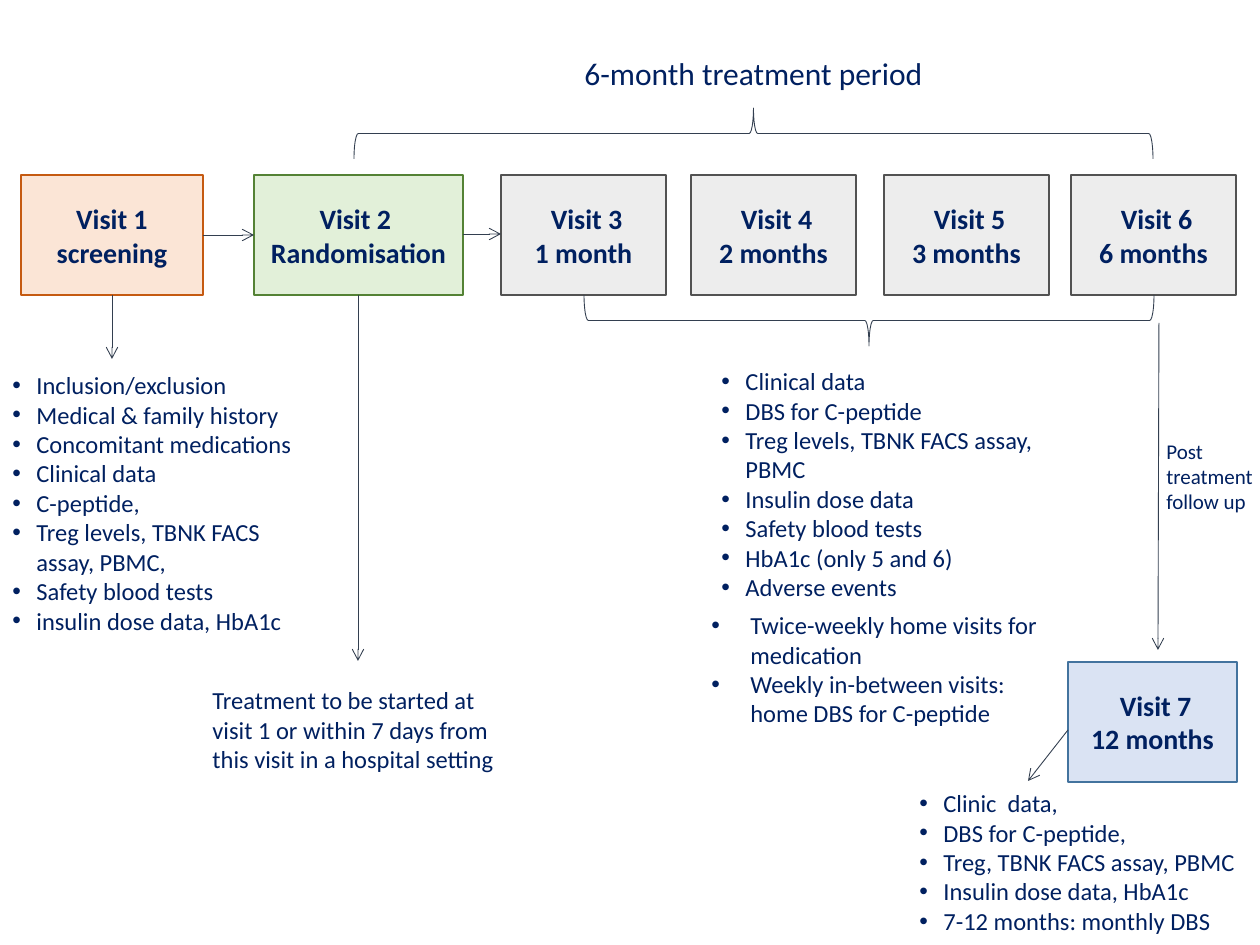
from lxml.etree import SubElement
from pptx import Presentation
from pptx.dml.color import RGBColor
from pptx.enum.shapes import MSO_CONNECTOR, MSO_SHAPE
from pptx.enum.text import MSO_ANCHOR, MSO_AUTO_SIZE, PP_ALIGN
from pptx.oxml.ns import qn
from pptx.util import Emu, Pt

PX_PER_INCH = 126
FONT = "Calibri"
NAVY = "002060"
LINE_COLOUR = "333F50"
VISIT_TOP, VISIT_HEIGHT = 175, 120
MONTH_WIDTH = 165
GREY_FILL, GREY_LINE = "EDEDED", "525252"

VISITS = [  # left, top, width, fill, line, text
    (21, VISIT_TOP, 182, "FBE5D6", "C55A11", "Visit 1 screening"),
    (254, VISIT_TOP, 209, "E2F0D9", "548235", "Visit 2 \nRandomisation"),
    (501, VISIT_TOP, MONTH_WIDTH, GREY_FILL, GREY_LINE, " Visit 3\n1 month"),
    (691, VISIT_TOP, MONTH_WIDTH, GREY_FILL, GREY_LINE, " Visit 4\n2 months"),
    (884, VISIT_TOP, MONTH_WIDTH, GREY_FILL, GREY_LINE, " Visit 5\n3 months"),
    (1071, VISIT_TOP, MONTH_WIDTH, GREY_FILL, GREY_LINE, " Visit 6\n6 months"),
    (1068, 662, 169, "DAE3F3", "43739E", " Visit 7\n12 months"),
]

ARROWS = [  # start x, start y, end x, end y
    (203, 235, 254, 235),
    (463, 234, 501, 234),
    (112, 295, 112, 359),
    (358, 295, 358, 661),
    (1159, 323, 1158, 650),
    (1068, 730, 1028, 781),
]

BULLET_LISTS = [  # left, top, width, height, indent, items
    (0, 364, 311, 369, 24, [
        "Inclusion/exclusion",
        "Medical & family history",
        "Concomitant medications",
        "Clinical data",
        "C-peptide,",
        "Treg levels, TBNK FACS assay, PBMC,",
        "Safety blood tests",
        "insulin dose data, HbA1c",
    ]),
    (709, 360, 359, 280, 24, [
        "Clinical data",
        "DBS for C-peptide",
        "Treg levels, TBNK FACS assay, PBMC",
        "Insulin dose data",
        "Safety blood tests",
        "HbA1c (only 5 and 6)",
        "Adverse events",
    ]),
    (699, 604, 368, 161, 39, [
        "Twice-weekly home visits for medication",
        "Weekly in-between visits: home DBS for C-peptide",
    ]),
    (907, 782, 353, 161, 24, [
        "Clinic  data,",
        "DBS for C-peptide,",
        "Treg, TBNK FACS assay, PBMC",
        "Insulin dose data, HbA1c",
        "7-12 months: monthly DBS",
    ]),
]


def px(length):
    return Emu(round(length * 914400 / PX_PER_INCH))


def colour(value):
    return RGBColor.from_string(value)


def set_line(line, value, width):
    line.color.rgb = colour(value)
    line.width = Pt(width)


def write(text_frame, text, size, bold=False, align=PP_ALIGN.LEFT):
    text_frame.word_wrap = True
    text_frame.text = text
    for paragraph in text_frame.paragraphs:
        paragraph.alignment = align
        for run in paragraph.runs:
            run.font.name = FONT
            run.font.size = Pt(size)
            run.font.bold = bold
            run.font.color.rgb = colour(NAVY)


def add_visit(slide, left, top, width, fill, line, text):
    shape = slide.shapes.add_shape(
        MSO_SHAPE.RECTANGLE, px(left), px(top), px(width), px(VISIT_HEIGHT))
    shape.shadow.inherit = False
    shape.fill.solid()
    shape.fill.fore_color.rgb = colour(fill)
    set_line(shape.line, line, 1)
    shape.text_frame.vertical_anchor = MSO_ANCHOR.MIDDLE
    write(shape.text_frame, text, 16, bold=True, align=PP_ALIGN.CENTER)


def add_text(slide, left, top, width, height, text, size=14, align=PP_ALIGN.LEFT):
    box = slide.shapes.add_textbox(px(left), px(top), px(width), px(height))
    write(box.text_frame, text, size, align=align)
    box.text_frame.auto_size = MSO_AUTO_SIZE.SHAPE_TO_FIT_TEXT
    return box


def add_bullets(slide, left, top, width, height, indent, items):
    box = add_text(slide, left, top, width, height, "\n".join(items))
    for paragraph in box.text_frame.paragraphs:
        properties = paragraph._p.get_or_add_pPr()
        properties.set("marL", str(px(indent)))
        properties.set("indent", str(-px(indent)))
        SubElement(properties, qn("a:buFont"), typeface="Arial")
        SubElement(properties, qn("a:buChar"), char="•")


def add_arrow(slide, start_x, start_y, end_x, end_y):
    connector = slide.shapes.add_connector(
        MSO_CONNECTOR.STRAIGHT, px(start_x), px(start_y), px(end_x), px(end_y))
    set_line(connector.line, LINE_COLOUR, 0.5)
    SubElement(connector.line._get_or_add_ln(), qn("a:tailEnd"), type="arrow")
    SubElement(connector._element.spPr, qn("a:effectLst"))


def add_brace(slide, left, top, span, depth, rotation):
    """Draw a horizontal brace; left, top, span and depth are as seen after rotation."""
    shift = (span - depth) / 2
    brace = slide.shapes.add_shape(
        MSO_SHAPE.RIGHT_BRACE, px(left + shift), px(top - shift), px(depth), px(span))
    brace.rotation = rotation
    brace.shadow.inherit = False
    brace.fill.background()
    set_line(brace.line, LINE_COLOUR, 0.5)


def main():
    presentation = Presentation()
    presentation.slide_width = px(1260)
    presentation.slide_height = px(945)
    slide = presentation.slides.add_slide(presentation.slide_layouts[6])

    for visit in VISITS:
        add_visit(slide, *visit)
    for bullet_list in BULLET_LISTS:
        add_bullets(slide, *bullet_list)
    for arrow in ARROWS:
        add_arrow(slide, *arrow)
    add_brace(slide, 354, 108, 799, 51, 270)
    add_brace(slide, 584, 295, 570, 51, 90)

    add_text(slide, 496, 48, 515, 50, "6-month treatment period",
             size=18, align=PP_ALIGN.CENTER)
    add_text(slide, 200, 679, 319, 102,
             "Treatment to be started at visit 1 or within 7 days from "
             "this visit in a hospital setting")
    add_text(slide, 1154, 432, 129, 89, "Post treatment follow up", size=12)

    presentation.save("out.pptx")


if __name__ == "__main__":
    main()
